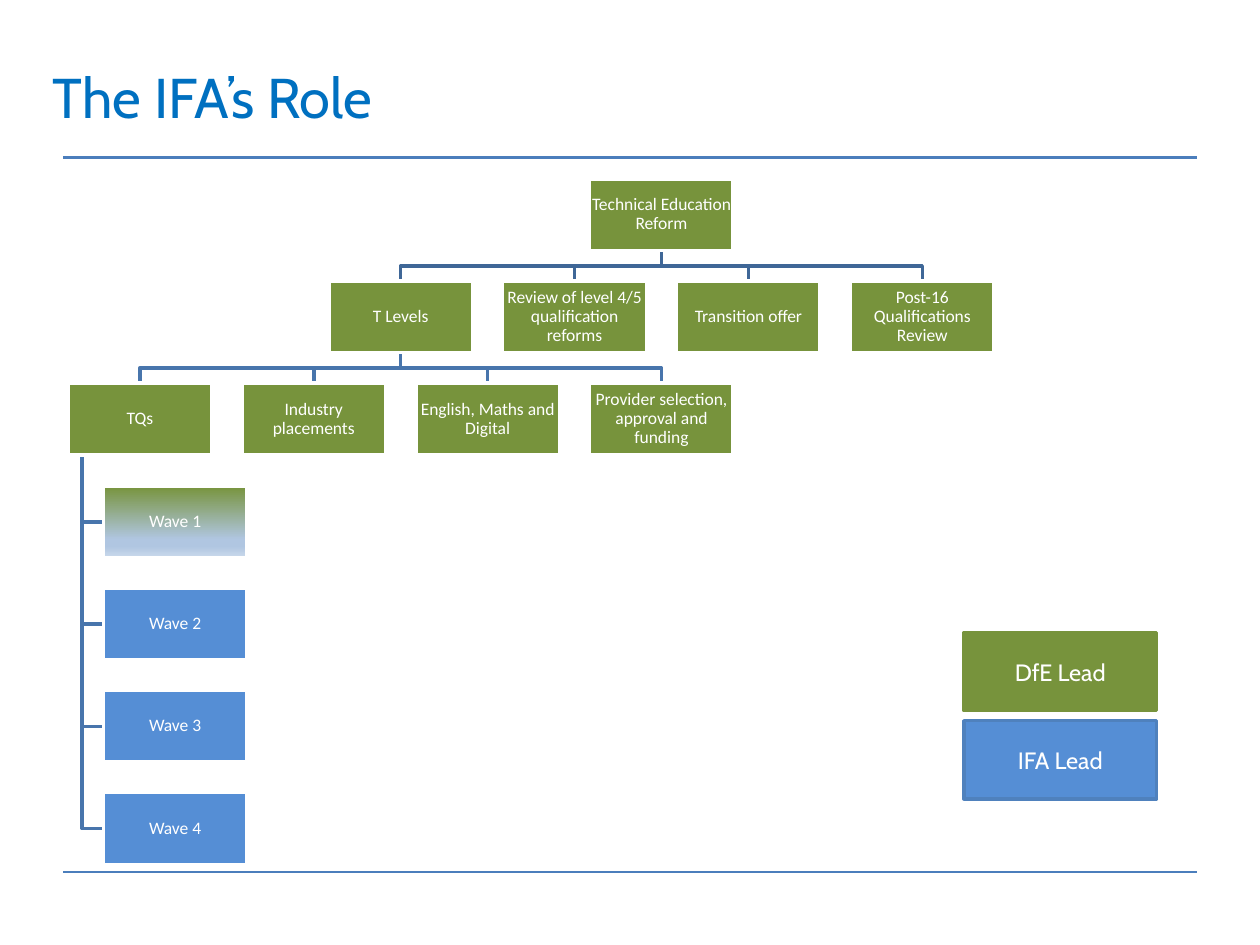
"""Build the organisation chart slide about the IFA's role in technical education reform."""
from lxml import etree
from pptx import Presentation
from pptx.dml.color import RGBColor
from pptx.enum.shapes import MSO_CONNECTOR, MSO_SHAPE
from pptx.enum.text import MSO_ANCHOR, PP_ALIGN
from pptx.oxml.ns import qn
from pptx.util import Inches, Pt

COLORS = {
    "title": "0070C0", "rule": "4B7EBC", "white": "FFFFFF",
    "dfe": "77933C", "ifa": "558ED5", "ifa_edge": "4F81BD",
    "link_top": "3F6797", "link": "4875AC",
    "fade_mid": "B0C6E1", "fade_end": "CAD9EB",
}
BOX_W, BOX_H = 1.14, 0.57
COL_STEP, ROW_STEP = 1.38, 0.81
TOP_Y, TQ_X, T_LEVELS_X, WAVE_X, WAVE_Y = 1.42, 0.54, 2.61, 0.82, 3.86
ROW2_Y, ROW3_Y = TOP_Y + ROW_STEP, TOP_Y + 2 * ROW_STEP
ROOT_X = TQ_X + 3 * COL_STEP
WAVE_STEM_X = 0.65


def add_box(x, y, w, h, text, fill, edge, size, font):
    sp = s.shapes.add_shape(MSO_SHAPE.RECTANGLE, Inches(x), Inches(y), Inches(w), Inches(h))
    sp.shadow.inherit = False
    sp.fill.solid()
    sp.fill.fore_color.rgb = RGBColor.from_string(COLORS[fill])
    sp.line.color.rgb = RGBColor.from_string(COLORS[edge])
    sp.line.width = Pt(2)
    tf = sp.text_frame
    tf.word_wrap = True
    tf.vertical_anchor = MSO_ANCHOR.MIDDLE
    p = tf.paragraphs[0]
    p.alignment = PP_ALIGN.CENTER
    r = p.add_run()
    r.text = text
    r.font.size = Pt(size)
    r.font.name = font
    r.font.color.rgb = RGBColor.from_string(COLORS["white"])
    return sp


def add_link(points, color):
    pts = [(Inches(x), Inches(y)) for x, y in points]
    builder = s.shapes.build_freeform(*pts[0])
    builder.add_line_segments(pts[1:], close=False)
    sp = builder.convert_to_shape()
    sp.shadow.inherit = False
    sp.fill.background()
    sp.line.color.rgb = RGBColor.from_string(COLORS[color])
    sp.line.width = Pt(2)


prs = Presentation()
prs.slide_width, prs.slide_height = Inches(10), Inches(7.5)
s = prs.slides.add_slide(prs.slide_layouts[5])

for y in (1.25, 6.92):
    rule = s.shapes.add_connector(MSO_CONNECTOR.STRAIGHT, Inches(0.5), Inches(y), Inches(9.5), Inches(y))
    rule.line.color.rgb = RGBColor.from_string(COLORS["rule"])
    rule.line.width = Pt(1.5)
    etree.SubElement(rule._element.spPr, qn("a:effectLst"))

title = s.shapes.title
title.left, title.top, title.width, title.height = Inches(0.42), Inches(0.56), Inches(8.62), Inches(0.79)
tf = title.text_frame
tf.margin_left = tf.margin_right = tf.margin_top = tf.margin_bottom = 0
tf.vertical_anchor = MSO_ANCHOR.TOP
p = tf.paragraphs[0]
p.alignment = PP_ALIGN.LEFT
p.line_spacing = 0.9
r = p.add_run()
r.text = "The IFA’s Role"
r.font.size = Pt(32)
r.font.name = "Cabin"
r.font.color.rgb = RGBColor.from_string(COLORS["title"])

legend = [("DfE Lead", "dfe", "dfe"), ("IFA Lead", "ifa", "ifa_edge")]
for i, (text, fill, edge) in enumerate(legend):
    add_box(7.65, 5.02 + 0.7 * i, 1.53, 0.62, text, fill, edge, 13.5, "Cabin")

reforms = ["T Levels", "Review of level 4/5 qualification reforms", "Transition offer",
           "Post-16 Qualifications Review"]
strands = ["TQs", "Industry placements", "English, Maths and Digital",
           "Provider selection, approval and funding"]
boxes = [("Technical Education Reform", ROOT_X, TOP_Y, "dfe")]
levels = [(reforms, T_LEVELS_X, ROW2_Y, ROOT_X, "link_top"),
          (strands, TQ_X, ROW3_Y, T_LEVELS_X, "link")]
for names, left, top, parent_x, color in levels:
    stem_x, stem_y = parent_x + BOX_W / 2, top - ROW_STEP + BOX_H
    mid_y = (stem_y + top) / 2
    for i, name in enumerate(names):
        x = left + COL_STEP * i
        child_x = x + BOX_W / 2
        add_link([(stem_x, stem_y), (stem_x, mid_y), (child_x, mid_y), (child_x, top)], color)
        boxes.append((name, x, top, "dfe"))

for i in range(4):
    y = WAVE_Y + ROW_STEP * i
    mid_y = y + BOX_H / 2
    add_link([(WAVE_STEM_X, ROW3_Y + BOX_H), (WAVE_STEM_X, mid_y), (WAVE_X, mid_y)], "link")
    boxes.append((f"Wave {i + 1}", WAVE_X, y, "ifa"))

for text, x, y, fill in boxes:
    sp = add_box(x, y, BOX_W, BOX_H, text, fill, "white", 10, "Calibri")
    tf = sp.text_frame
    tf.margin_left = tf.margin_right = tf.margin_top = tf.margin_bottom = Inches(0.01)
    tf.paragraphs[0].line_spacing = 0.9
    if text == "Wave 1":
        sp.fill.gradient()
        sp.fill.gradient_angle = 270
        stops = sp._element.spPr.find(qn("a:gradFill")).find(qn("a:gsLst"))
        for stop in list(stops):
            stops.remove(stop)
        for pos, color in [(0, "dfe"), (74, "fade_mid"), (83, "fade_mid"), (100, "fade_end")]:
            stop = etree.SubElement(stops, qn("a:gs"), pos=str(pos * 1000))
            etree.SubElement(stop, qn("a:srgbClr"), val=COLORS[color])

prs.save("out.pptx")
